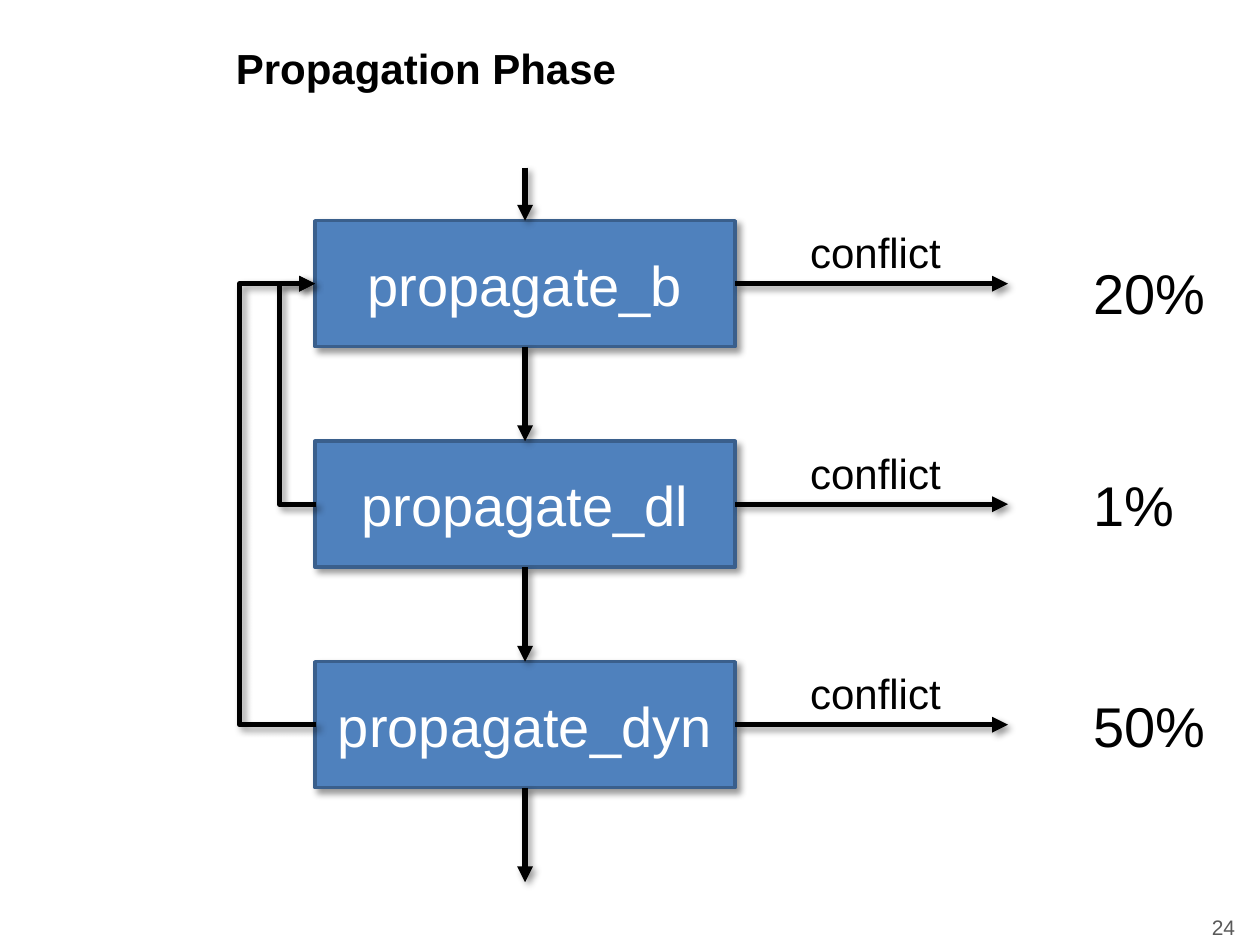
from dataclasses import dataclass

from lxml import etree
from pptx import Presentation
from pptx.dml.color import RGBColor
from pptx.enum.shapes import MSO_CONNECTOR, MSO_SHAPE
from pptx.enum.text import MSO_ANCHOR, PP_ALIGN
from pptx.oxml import parse_xml
from pptx.oxml.ns import nsdecls, qn
from pptx.util import Cm, Pt

STRAIGHT, ELBOW = MSO_CONNECTOR.STRAIGHT, MSO_CONNECTOR.ELBOW
RECT = MSO_SHAPE.RECTANGLE
LEFT, CENTER, RIGHT = PP_ALIGN.LEFT, PP_ALIGN.CENTER, PP_ALIGN.RIGHT
TOP, MIDDLE = MSO_ANCHOR.TOP, MSO_ANCHOR.MIDDLE

# All lengths are in centimetres.
BOX_LEFT, BOX_TOP, BOX_W, BOX_H = 6.35, 4.45, 8.47, 2.54
PITCH = 4.445
BOX_RIGHT = BOX_LEFT + BOX_W
BOX_MID = BOX_LEFT + BOX_W / 2
CONFLICT_END = 20.32
LOOP_OFFSET = 0.03
BLACK, WHITE, GREY = "000000", "FFFFFF", "595959"
BLUE, DARK_BLUE = "4F81BD", "3A5F8C"


@dataclass
class Step:
    name: str
    share: str
    share_top: float
    loop_x: float | None = None


STEPS = [
    Step("propagate_b", "20%", 5.08),
    Step("propagate_dl", "1%", 9.37, loop_x=5.64),
    Step("propagate_dyn", "50%", 13.82, loop_x=4.83),
]


def rgb(value: str) -> RGBColor:
    return RGBColor.from_string(value)


def add_shadow(sp) -> None:
    sp._element.spPr.append(parse_xml(
        f'<a:effectLst {nsdecls("a")}>'
        '<a:outerShdw blurRad="50800" dist="38100" dir="2700000" algn="tl" rotWithShape="0">'
        '<a:srgbClr val="000000"><a:alpha val="40000"/></a:srgbClr>'
        '</a:outerShdw></a:effectLst>'))


def write(sp, text: str, size: int, color: str = BLACK, align=LEFT,
          anchor=TOP, bold: bool = False, wrap: bool = True) -> None:
    tf = sp.text_frame
    tf.text = text
    tf.word_wrap = wrap
    tf.vertical_anchor = anchor
    p = tf.paragraphs[0]
    p.alignment = align
    font = p.runs[0].font
    font.name, font.size, font.bold = "Arial", Pt(size), bold
    font.color.rgb = rgb(color)


def add_label(s, x: float, y: float, w: float, h: float, text: str, size: int, **style) -> None:
    sp = s.shapes.add_textbox(Cm(x), Cm(y), Cm(w), Cm(h))
    write(sp, text, size, **style)


def add_box(s, y: float, text: str) -> None:
    sp = s.shapes.add_shape(RECT, Cm(BOX_LEFT), Cm(y), Cm(BOX_W), Cm(BOX_H))
    sp.fill.solid()
    sp.fill.fore_color.rgb = rgb(BLUE)
    sp.line.color.rgb = rgb(DARK_BLUE)
    sp.line.width = Pt(2)
    add_shadow(sp)
    write(sp, text, 32, WHITE, CENTER, MIDDLE)


def add_arrow(s, x1: float, y1: float, x2: float, y2: float, kind=STRAIGHT):
    c = s.shapes.add_connector(kind, Cm(x1), Cm(y1), Cm(x2), Cm(y2))
    c.line.color.rgb = rgb(BLACK)
    c.line.width = Pt(3)
    etree.SubElement(c.line._get_or_add_ln(), qn("a:tailEnd"), type="triangle")
    add_shadow(c)
    return c


def add_loop(s, y_from: float, y_to: float, x: float) -> None:
    """Lead from a lower box around the left, along x, back to an upper box."""
    start = BOX_LEFT + LOOP_OFFSET
    c = add_arrow(s, BOX_LEFT, y_to, start, y_from, ELBOW)
    spPr = c._element.spPr
    spPr.find(qn("a:xfrm")).set("rot", "10800000")
    bend = round((start - x) / LOOP_OFFSET * 100000)
    guides = spPr.find(qn("a:prstGeom")).find(qn("a:avLst"))
    etree.SubElement(guides, qn("a:gd"), name="adj1", fmla=f"val {bend}")


def main() -> None:
    prs = Presentation()
    prs.slide_width, prs.slide_height = Cm(25.4), Cm(19.05)
    s = prs.slides.add_slide(prs.slide_layouts[5])

    title = s.shapes.title
    title.left, title.top, title.width, title.height = Cm(4.5), Cm(0.33), Cm(18.54), Cm(2.06)
    write(title, "Propagation Phase", 24, anchor=MIDDLE, bold=True)
    add_label(s, 19.23, 18.34, 5.92, 0.71, "24", 12, color=GREY, align=RIGHT, anchor=MIDDLE)

    tops = [BOX_TOP + i * PITCH for i in range(len(STEPS))]
    for step, top in zip(STEPS, tops):
        add_box(s, top, step.name)

    add_arrow(s, BOX_MID, 3.38, BOX_MID, BOX_TOP)
    entry = BOX_TOP + BOX_H / 2
    for step, top in zip(STEPS, tops):
        middle = top + BOX_H / 2
        add_arrow(s, BOX_RIGHT, middle, CONFLICT_END, middle)
        add_label(s, 16.08, top, 3.18, 1.27, "conflict", 24, wrap=False)
        add_arrow(s, BOX_MID, top + BOX_H, BOX_MID, top + PITCH)
        add_label(s, 21.79, step.share_top, 2.79, 1.63, step.share, 32, wrap=False)
        if step.loop_x is not None:
            add_loop(s, middle, entry, step.loop_x)

    prs.save("out.pptx")


if __name__ == "__main__":
    main()
